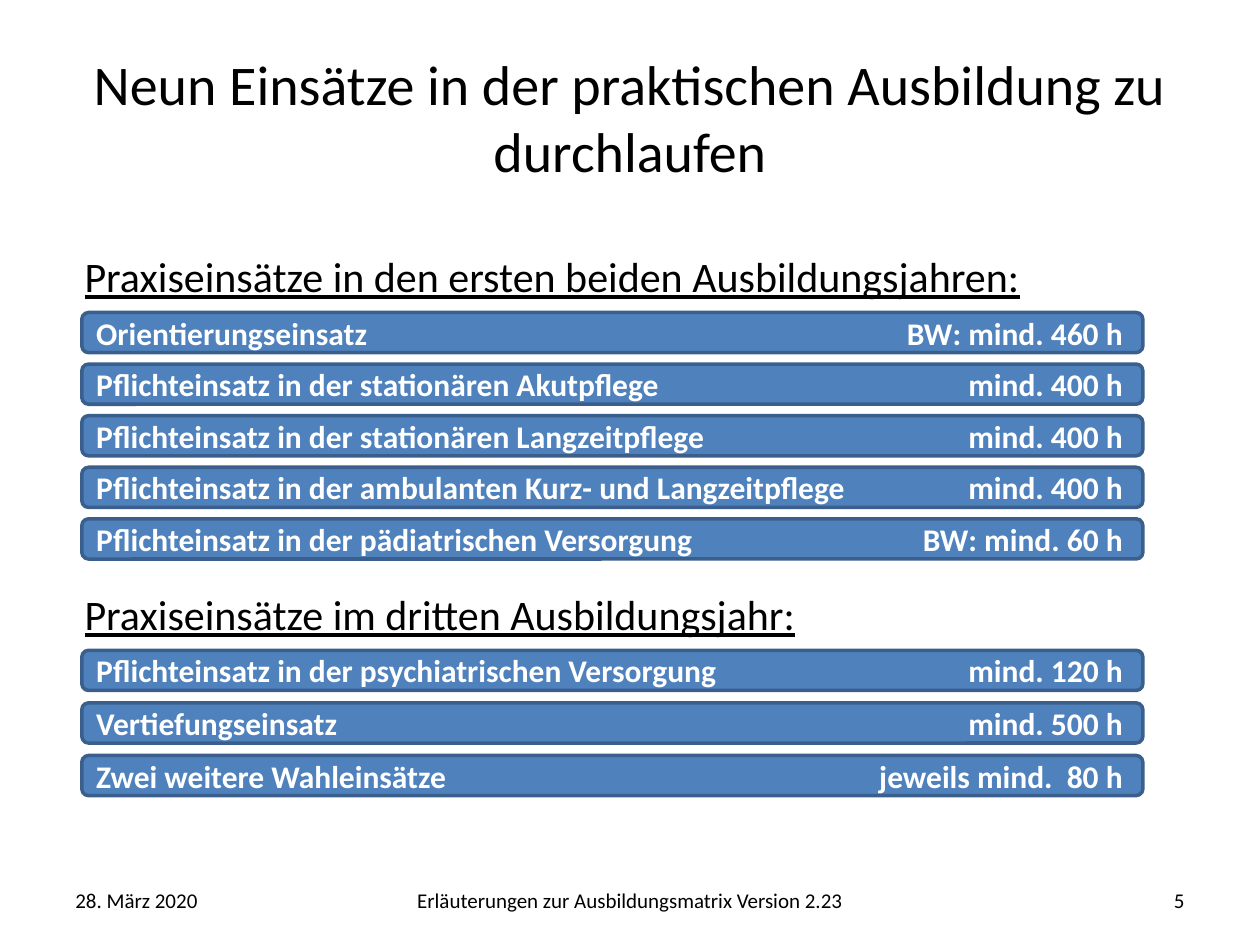
from lxml import etree
from pptx import Presentation
from pptx import util as u
from pptx.dml.color import RGBColor
from pptx.enum import shapes, text
from pptx.oxml import ns

COLORS = {"text": "000000", "bar": "4F81BD", "edge": "3A5F8C", "bar_text": "FFFFFF"}
LEFT, CENTER, RIGHT = text.PP_ALIGN.LEFT, text.PP_ALIGN.CENTER, text.PP_ALIGN.RIGHT
MIDDLE, TOP = text.MSO_ANCHOR.MIDDLE, text.MSO_ANCHOR.TOP

FIRST_YEARS = [
    ("Orientierungseinsatz", "BW: mind. 460 h"),
    ("Pflichteinsatz in der stationären Akutpflege", "mind. 400 h"),
    ("Pflichteinsatz in der stationären Langzeitpflege", "mind. 400 h"),
    ("Pflichteinsatz in der ambulanten Kurz- und Langzeitpflege", "mind. 400 h"),
    ("Pflichteinsatz in der pädiatrischen Versorgung", "BW: mind. 60 h"),
]
THIRD_YEAR = [
    ("Pflichteinsatz in der psychiatrischen Versorgung", "mind. 120 h"),
    ("Vertiefungseinsatz", "mind. 500 h"),
    ("Zwei weitere Wahleinsätze", "jeweils mind.  80 h"),
]
HEADINGS = [
    ("Praxiseinsätze in den ersten beiden Ausbildungsjahren:", 0),
    ("Praxiseinsätze im dritten Ausbildungsjahr:", 164),
]
FOOTER = [
    ("28. März 2020", 1.27, 5.93, LEFT),
    ("Erläuterungen zur Ausbildungsmatrix Version 2.23", 6.5, 12.4, CENTER),
    ("5", 18.2, 5.93, RIGHT),
]


def apply_format(target, values):
    for name, value in values.items():
        setattr(target, name, value)


def place(box, left, top, width, height):
    apply_format(box, {"left": u.Cm(left), "top": u.Cm(top),
                       "width": u.Cm(width), "height": u.Cm(height)})


def set_frame(box, anchor):
    apply_format(box.text_frame, {"word_wrap": True, "vertical_anchor": anchor,
                                  "auto_size": text.MSO_AUTO_SIZE.NONE})


def write(para, words, size, align, color="text", **values):
    para.alignment = align
    span = para.add_run()
    span.text = words
    apply_format(span.font, {"name": "Calibri", "size": u.Pt(size), **values})
    span.font.color.rgb = RGBColor.from_string(COLORS[color])


def add_title(page, words):
    box = page.shapes.title
    place(box, 1.27, 0.76, 22.86, 3.18)
    set_frame(box, MIDDLE)
    write(box.text_frame.paragraphs[0], words, 32, CENTER)


def add_headings(page):
    box = page.placeholders[1]
    place(box, 1.45, 4.93, 22.86, 11.38)
    set_frame(box, TOP)
    for index, (words, gap) in enumerate(HEADINGS):
        frame = box.text_frame
        para = frame.add_paragraph() if index else frame.paragraphs[0]
        write(para, words, 24, LEFT, underline=True)
        para.space_before = u.Pt(gap)
        properties = para._p.get_or_add_pPr()
        properties.set("marL", "0")
        properties.set("indent", "0")
        etree.SubElement(properties, ns.qn("a:buNone"))


def add_bar(page, top, name, hours):
    box = page.shapes.add_shape(shapes.MSO_SHAPE.ROUNDED_RECTANGLE,
                                u.Cm(1.65), u.Cm(top), u.Cm(21.39), u.Cm(0.81))
    box.shadow.inherit = False
    box.fill.solid()
    box.fill.fore_color.rgb = RGBColor.from_string(COLORS["bar"])
    box.line.color.rgb = RGBColor.from_string(COLORS["edge"])
    box.line.width = u.Pt(2)
    set_frame(box, MIDDLE)
    para = box.text_frame.paragraphs[0]
    write(para, f"{name}\t{hours}", 18, LEFT, "bar_text", bold=True)
    stops = etree.SubElement(para._p.get_or_add_pPr(), ns.qn("a:tabLst"))
    etree.SubElement(stops, ns.qn("a:tab"), pos=str(u.Cm(20.7)), algn="r")


def add_bars(page, rows, top, pitch):
    for index, (name, hours) in enumerate(rows):
        add_bar(page, top + index * pitch, name, hours)


def add_footer(page):
    for words, left, width, align in FOOTER:
        box = page.shapes.add_textbox(u.Cm(left), u.Cm(17.65), u.Cm(width), u.Cm(1.01))
        set_frame(box, MIDDLE)
        write(box.text_frame.paragraphs[0], words, 12, align)


def main():
    deck = Presentation()
    apply_format(deck, {"slide_width": u.Cm(25.4), "slide_height": u.Cm(19.05)})
    page = deck.slides.add_slide(deck.slide_layouts[1])
    add_title(page, "Neun Einsätze in der praktischen Ausbildung zu durchlaufen")
    add_headings(page)
    add_footer(page)
    add_bars(page, FIRST_YEARS, 6.3, 1.04)
    add_bars(page, THIRD_YEAR, 13.11, 1.06)
    deck.save("out.pptx")


if __name__ == "__main__":
    main()
